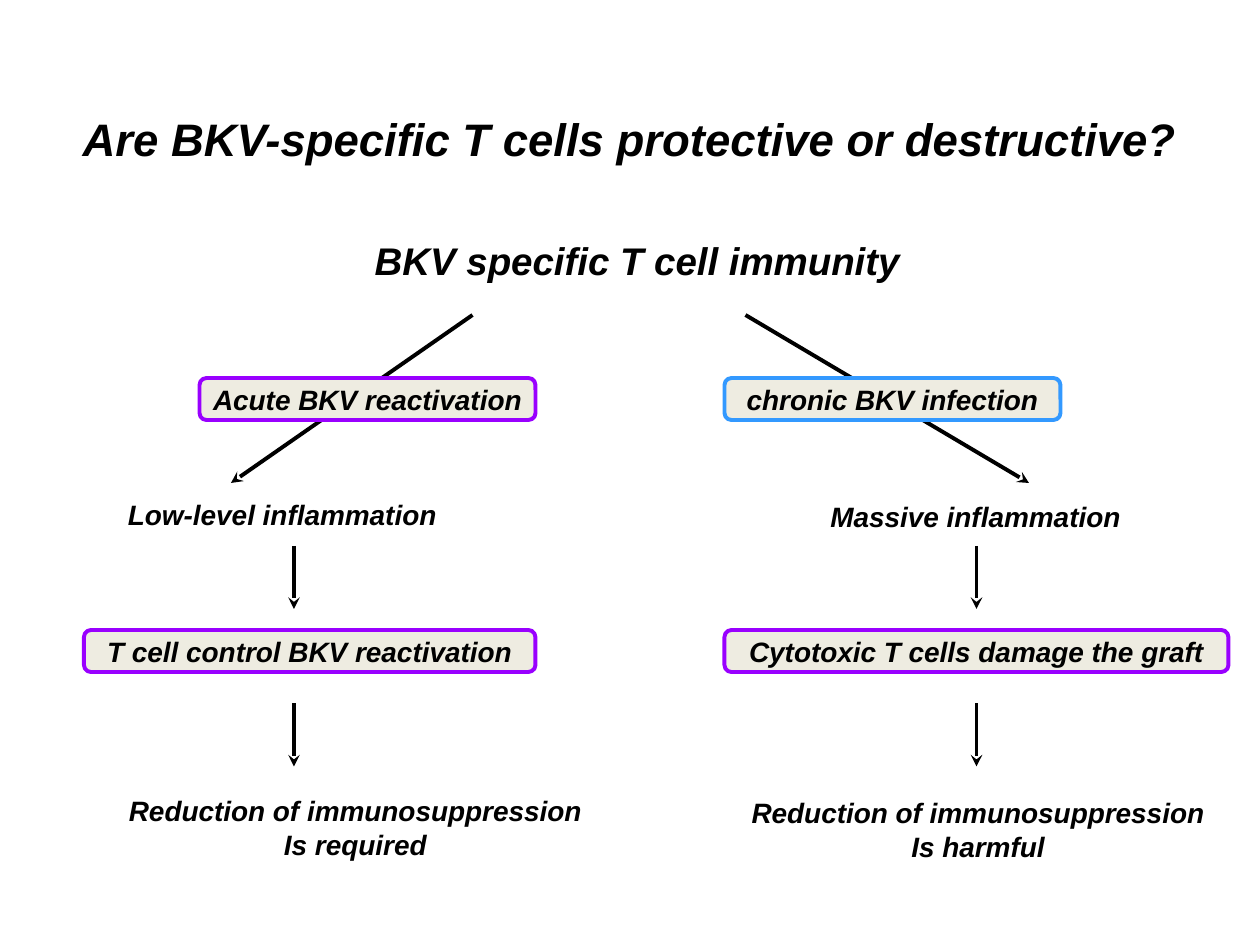
"""Build a slide that weighs protective against destructive BKV-specific T cells."""
from lxml.etree import SubElement
from pptx import Presentation
from pptx.dml.color import RGBColor
from pptx.enum.shapes import MSO_CONNECTOR, MSO_SHAPE
from pptx.enum.text import MSO_ANCHOR, MSO_AUTO_SIZE, PP_ALIGN
from pptx.oxml.ns import qn
from pptx.util import Inches, Pt

BLACK = RGBColor(0x00, 0x00, 0x00)
CREAM = RGBColor(0xEE, 0xEC, 0xE1)
PURPLE = RGBColor(0x99, 0x00, 0xFF)
BLUE = RGBColor(0x33, 0x99, 0xFF)
FONT = {"name": "Arial", "bold": True, "italic": True}
LEFT, CENTER = PP_ALIGN.LEFT, PP_ALIGN.CENTER

deck = Presentation()
deck.slide_width, deck.slide_height = Inches(10), Inches(7.5)
page = deck.slides.add_slide(deck.slide_layouts[6])
CELL = deck.slide_width / 120


def grid(*cells):
    return [round(cell * CELL) for cell in cells]


def write(box, lines, size, align):
    for number, line in enumerate(lines):
        paragraphs = box.text_frame.paragraphs
        para = box.text_frame.add_paragraph() if number else paragraphs[0]
        para.alignment = align
        span = para.add_run()
        span.text = line
        for name, value in {**FONT, "size": Pt(size)}.items():
            setattr(span.font, name, value)
        span.font.color.rgb = BLACK


branches = [(71, 30, 98, 46), (45, 30, 22, 46)]
steps = [(column, row, column, row + 6) for row in (52, 67) for column in (28, 93)]
for ends in branches + steps:
    arrow = page.shapes.add_connector(MSO_CONNECTOR.STRAIGHT, *grid(*ends))
    arrow.line.color.rgb = BLACK
    arrow.line.width = Pt(2.25)
    SubElement(arrow.line._get_or_add_ln(), qn("a:tailEnd"), type="stealth")
    SubElement(arrow._element.spPr, qn("a:effectLst"))

labels = [
    (-1, 10, 122, 6.4, 26, CENTER, True, ["Are BKV-specific T cells protective or destructive?"]),
    (34.5, 22, 52.5, 5.6, 22, LEFT, False, ["BKV specific T cell immunity"]),
    (11, 46.8, 32, 4.4, 16, LEFT, False, ["Low-level inflammation"]),
    (77.9, 47, 30.1, 4.4, 16, LEFT, False, ["Massive inflammation"]),
    (11, 75, 45.7, 7.7, 16, CENTER, False, ["Reduction of immunosuppression", "Is required"]),
    (70.3, 75.2, 45.7, 7.7, 16, CENTER, False, ["Reduction of immunosuppression", "Is harmful"]),
]
for left, top, width, height, size, align, wrap, lines in labels:
    box = page.shapes.add_textbox(*grid(left, top, width, height))
    box.text_frame.word_wrap = wrap
    box.text_frame.auto_size = MSO_AUTO_SIZE.SHAPE_TO_FIT_TEXT
    write(box, lines, size, align)

stages = [
    (19, 36, 32, PURPLE, "Acute BKV reactivation"),
    (69, 36, 32, BLUE, "chronic BKV infection"),
    (8, 60, 43, PURPLE, "T cell control BKV reactivation"),
    (69, 60, 48, PURPLE, "Cytotoxic T cells damage the graft"),
]
for left, top, width, color, line in stages:
    box = page.shapes.add_shape(MSO_SHAPE.ROUNDED_RECTANGLE, *grid(left, top, width, 4))
    box.shadow.inherit = False
    box.fill.solid()
    box.fill.fore_color.rgb = CREAM
    box.line.color.rgb = color
    box.line.width = Pt(2.25)
    box.text_frame.word_wrap = False
    box.text_frame.vertical_anchor = MSO_ANCHOR.MIDDLE
    write(box, [line], 16, CENTER)

deck.save("out.pptx")
